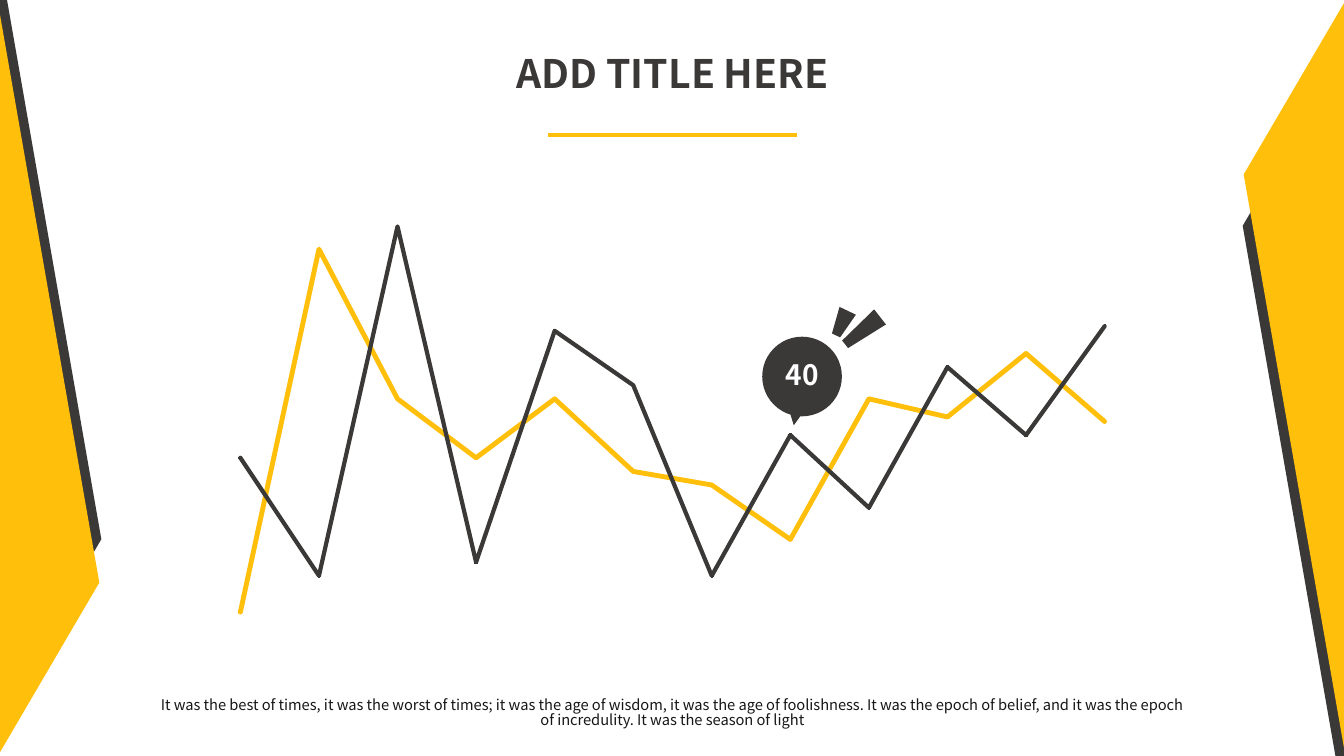
from lxml import etree
from pptx import Presentation
from pptx.chart.data import CategoryChartData
from pptx.dml.color import RGBColor
from pptx.enum.chart import XL_CHART_TYPE as ChartType, XL_MARKER_STYLE as Marker
from pptx.enum.shapes import MSO_CONNECTOR as Connector, MSO_SHAPE as Shape
from pptx.enum.text import MSO_ANCHOR as Anchor, MSO_AUTO_SIZE as AutoSize, PP_ALIGN as Align
from pptx.oxml.ns import qn
from pptx.util import Inches, Pt

DARK, YELLOW, WHITE, BODY, GREY = "3B3838", "FFBF0B", "FFFFFF", "181717", "808080"


def colour(code):
    return RGBColor.from_string(code)


class SlideBuilder:
    """Holds the shared style and the slide being built."""

    font = "Noto Sans CJK SC"

    def __init__(self, page):
        self.page = page

    def style_font(self, font, size, code, bold=False):
        values = {"name": self.font, "size": Pt(size), "bold": bold}
        for name, value in values.items():
            setattr(font, name, value)
        font.color.rgb = colour(code)

    def fill_text(self, box, text, size, code, bold=False, spacing=1.0,
                  anchor=Anchor.TOP, fit=AutoSize.SHAPE_TO_FIT_TEXT):
        frame = box.text_frame
        values = {"word_wrap": True, "auto_size": fit, "vertical_anchor": anchor}
        for name, value in values.items():
            setattr(frame, name, value)
        para = frame.paragraphs[0]
        para.alignment = Align.CENTER
        para.line_spacing = spacing
        span = para.add_run()
        span.text = text
        self.style_font(span.font, size, code, bold)

    def title(self, text, left, top, width, height):
        box = self.page.shapes.title
        place = {"left": left, "top": top, "width": width, "height": height}
        for name, value in place.items():
            setattr(box, name, Inches(value))
        self.fill_text(box, text, 28, DARK, bold=True, anchor=Anchor.MIDDLE, fit=AutoSize.NONE)

    def text(self, text, place, size, code, **style):
        box = self.page.shapes.add_textbox(*map(Inches, place))
        self.fill_text(box, text, size, code, **style)

    def shape(self, kind, place, code, rotation=0, peak=None):
        shape = self.page.shapes.add_shape(kind, *map(Inches, place))
        shape.shadow.inherit = False
        shape.rotation = rotation
        shape.fill.solid()
        shape.fill.fore_color.rgb = colour(code)
        shape.line.fill.background()
        if peak is not None:
            shape.adjustments[0] = peak

    def rule(self, left, right, y, code, width):
        line = self.page.shapes.add_connector(
            Connector.STRAIGHT, Inches(left), Inches(y), Inches(right), Inches(y))
        line.line.color.rgb = colour(code)
        line.line.width = Pt(width)
        etree.SubElement(line._element.spPr, qn("a:effectLst"))

    def line_chart(self, place, series_styles):
        data = CategoryChartData()
        data.categories = [str(number) for number in range(1, 13)]
        for name, values, _, _ in series_styles:
            data.add_series(name, values)
        chart = self.page.shapes.add_chart(
            ChartType.LINE_MARKERS, *map(Inches, place), data).chart
        chart.has_legend = chart.has_title = False
        self.style_font(chart.font, 10, GREY)
        for axis in (chart.category_axis, chart.value_axis):
            axis.has_major_gridlines = False
            axis.visible = False
        chart.value_axis.minimum_scale = 15
        chart.value_axis.maximum_scale = 108
        plot = chart.plots[0]
        plot.vary_by_categories = False
        for series, (_, _, code, width) in zip(plot.series, series_styles):
            series.smooth = False
            series.format.line.color.rgb = colour(code)
            series.format.line.width = Pt(width)
            series._element.find(qn("c:spPr")).find(qn("a:ln")).set("cap", "rnd")
            series.marker.style = Marker.CIRCLE
            series.marker.size = 2
            series.marker.format.fill.background()
            series.marker.format.line.fill.background()


def main():
    deck = Presentation()
    deck.slide_width, deck.slide_height = Inches(13.33), Inches(7.5)
    builder = SlideBuilder(deck.slides.add_slide(deck.slide_layouts[5]))

    # Side wedges: left, top, colour, rotation
    wedges = [(9.08, 3.76, DARK, 270), (-3.25, 2.82, DARK, 90),
              (-3.27, 3.25, YELLOW, 90), (9.09, 3.25, YELLOW, 270)]
    for left, top, code, rotation in wedges:
        builder.shape(Shape.ISOSCELES_TRIANGLE, (left, top, 7.5, 1.01), code, rotation, peak=0.77)

    # Heading
    builder.title("ADD TITLE HERE", 4.76, 0.33, 3.82, 0.78)
    builder.rule(5.44, 7.9, 1.34, YELLOW, 3)

    # Chart
    builder.line_chart((1.8, 1.8, 9.74, 4.36), [
        ("Series 1", (15, 95, 62, 49, 62, 46, 43, 31, 62, 58, 72, 57), YELLOW, 3.5),
        ("Series 2", (49, 23, 100, 26, 77, 65, 23, 54, 38, 69, 54, 78), DARK, 3),
    ])

    # Callout bubble
    builder.shape(Shape.OVAL, (7.56, 3.34, 0.79, 0.79), DARK)
    builder.shape(Shape.ISOSCELES_TRIANGLE, (7.81, 4.07, 0.15, 0.15), DARK, 189.5)
    builder.shape(Shape.TRAPEZOID, (8.26, 3.07, 0.18, 0.27), DARK, 205.4)
    builder.shape(Shape.TRAPEZOID, (8.46, 3.06, 0.19, 0.44), DARK, 231.9)
    builder.text("40", (7.66, 3.5, 0.6, 0.44), 20, WHITE, bold=True)

    # Caption
    builder.text(
        "It was the best of times, it was the worst of times; it was the age of wisdom, "
        "it was the age of foolishness. It was the epoch of belief, and it was the epoch "
        "of incredulity. It was the season of light",
        (1.47, 6.88, 10.4, 0.45), 10.5, BODY, spacing=0.85)

    deck.save("out.pptx")


if __name__ == "__main__":
    main()
